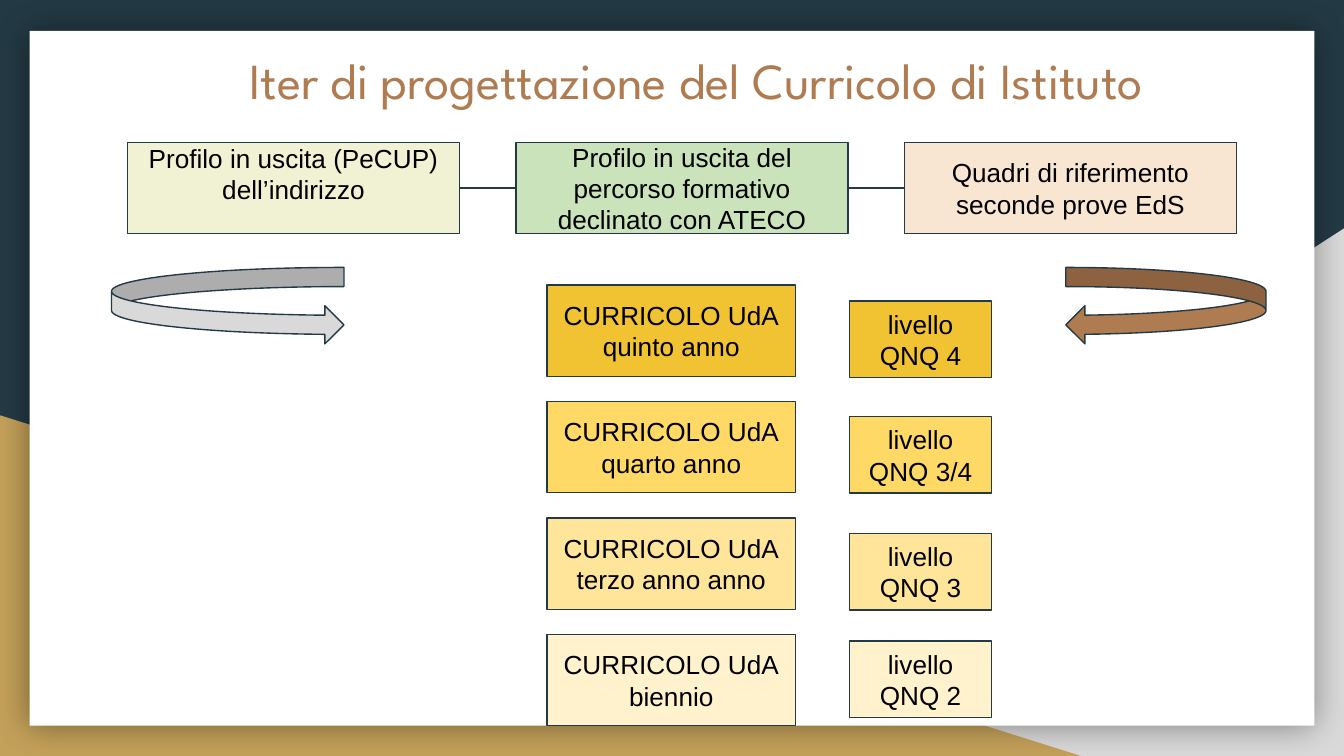
from dataclasses import dataclass
from typing import Optional

from lxml.etree import SubElement
from pptx import Presentation
from pptx.dml.color import RGBColor
from pptx.enum.shapes import MSO_CONNECTOR, MSO_SHAPE
from pptx.enum.text import MSO_ANCHOR, PP_ALIGN
from pptx.oxml.ns import qn
from pptx.util import Inches, Pt

NAVY = RGBColor(0x23, 0x3A, 0x44)
GRAY = RGBColor(0xD9, 0xD9, 0xD9)
GOLD = RGBColor(0xC4, 0xA1, 0x5A)
WHITE = RGBColor(0xFF, 0xFF, 0xFF)
BLACK = RGBColor(0, 0, 0)
BROWN = RGBColor(0xAF, 0x7B, 0x51)
CREAM = RGBColor(0xF1, 0xF2, 0xD3)
GREEN = RGBColor(0xC4, 0xE0, 0xB2)
PEACH = RGBColor(0xF8, 0xE6, 0xD3)
AMBER = RGBColor(0xF1, 0xC2, 0x32)
YELLOW = RGBColor(0xFF, 0xD9, 0x66)
LIGHT_YELLOW = RGBColor(0xFF, 0xE5, 0x99)
PALE_YELLOW = RGBColor(0xFF, 0xF2, 0xCC)


@dataclass(frozen=True)
class Box:
    left: float
    top: float
    width: float
    height: float


@dataclass(frozen=True)
class Year:
    name: str
    level: str
    level_top: float
    color: RGBColor


PROFILES = [
    (["Profilo in uscita (PeCUP)", "dell’indirizzo"], CREAM),
    (["Profilo in uscita del percorso formativo declinato con ATECO"], GREEN),
    (["Quadri di riferimento", "seconde prove EdS"], PEACH),
]
YEARS = [
    Year("quinto anno", "4", 2.24, AMBER),
    Year("quarto anno", "3/4", 3.1, YELLOW),
    Year("terzo anno anno", "3", 3.97, LIGHT_YELLOW),
    Year("biennio", "2", 4.77, PALE_YELLOW),
]


def add_panel(slide, kind: MSO_SHAPE, box: Box, fill: RGBColor,
              line: Optional[RGBColor] = None):
    shape = slide.shapes.add_shape(kind, Inches(box.left), Inches(box.top),
                                   Inches(box.width), Inches(box.height))
    shape.shadow.inherit = False
    shape.fill.solid()
    shape.fill.fore_color.rgb = fill
    if line is None:
        shape.line.fill.background()
    else:
        shape.line.color.rgb = line
        shape.line.width = Pt(0.75)
    return shape


def write_text(shape, lines: list[str], size: float, font: str, color: RGBColor) -> None:
    frame = shape.text_frame
    frame.word_wrap = True
    frame.vertical_anchor = MSO_ANCHOR.MIDDLE
    frame.margin_left = frame.margin_right = Inches(0.1)
    frame.margin_top = frame.margin_bottom = Inches(0.1)
    frame.text = "\n".join(lines)
    for paragraph in frame.paragraphs:
        paragraph.alignment = PP_ALIGN.CENTER
        paragraph.font.size = Pt(size)
        paragraph.font.name = font
        paragraph.font.color.rgb = color


def add_label(slide, box: Box, lines: list[str], fill: RGBColor):
    shape = add_panel(slide, MSO_SHAPE.RECTANGLE, box, fill, NAVY)
    write_text(shape, lines, 14, "Arial", BLACK)
    return shape


def set_alpha(color_element, percent: int) -> None:
    SubElement(color_element, qn("a:alpha")).set("val", str(percent * 1000))


def add_soft_shadow(shape) -> None:
    effects = shape._element.spPr.find(qn("a:effectLst"))
    shadow = SubElement(effects, qn("a:outerShdw"))
    shadow.set("blurRad", str(Pt(18)))
    shadow.set("rotWithShape", "0")
    color = SubElement(shadow, qn("a:srgbClr"))
    color.set("val", str(BLACK))
    set_alpha(color, 40)


def connect(slide, start, end) -> None:
    connector = slide.shapes.add_connector(MSO_CONNECTOR.STRAIGHT, 0, 0, 0, 0)
    connector.begin_connect(start, 3)
    connector.end_connect(end, 1)
    connector.line.color.rgb = NAVY
    connector.line.width = Pt(0.75)
    SubElement(connector._element.spPr, qn("a:effectLst"))


def add_backdrop(slide) -> None:
    slide.background.fill.solid()
    slide.background.fill.fore_color.rgb = NAVY
    corner = add_panel(slide, MSO_SHAPE.RIGHT_TRIANGLE, Box(3.92, 1.7, 6.08, 3.93), GRAY)
    corner._element.spPr.find(qn("a:xfrm")).set("flipH", "1")
    add_panel(slide, MSO_SHAPE.RIGHT_TRIANGLE, Box(0, 3.09, 8.06, 2.54), GOLD)
    sheet = add_panel(slide, MSO_SHAPE.RECTANGLE, Box(0.22, 0.23, 9.56, 5.17), WHITE)
    add_soft_shadow(sheet)


def add_profiles(slide) -> None:
    shapes = [add_label(slide, Box(0.95 + 2.89 * column, 1.06, 2.47, 0.68), lines, fill)
              for column, (lines, fill) in enumerate(PROFILES)]
    outgoing, pathway, _ = shapes
    outgoing.text_frame.vertical_anchor = MSO_ANCHOR.TOP
    outgoing.text_frame.margin_top = 0
    set_alpha(pathway._element.spPr.find(qn("a:solidFill"))[0], 89)
    for start, end in zip(shapes, shapes[1:]):
        connect(slide, start, end)


def add_years(slide) -> None:
    for row, year in enumerate(YEARS):
        add_label(slide, Box(4.07, 2.12 + 0.867 * row, 1.85, 0.68),
                  ["CURRICOLO UdA", year.name], year.color)
        add_label(slide, Box(6.32, year.level_top, 1.06, 0.57),
                  [f"livello QNQ {year.level}"], year.color)


def main() -> None:
    presentation = Presentation()
    presentation.slide_width = Inches(10)
    presentation.slide_height = Inches(5.625)
    slide = presentation.slides.add_slide(presentation.slide_layouts[6])
    add_backdrop(slide)
    title = slide.shapes.add_textbox(Inches(0.52), Inches(0.25), Inches(9.32), Inches(0.68))
    write_text(title, ["Iter di progettazione del Curricolo di Istituto"],
               27, "League Spartan", BROWN)
    add_profiles(slide)
    add_panel(slide, MSO_SHAPE.CURVED_RIGHT_ARROW, Box(0.83, 1.99, 1.73, 0.57), GRAY, NAVY)
    add_panel(slide, MSO_SHAPE.CURVED_LEFT_ARROW, Box(7.93, 1.99, 1.49, 0.57), BROWN, NAVY)
    add_years(slide)
    presentation.save("out.pptx")


if __name__ == "__main__":
    main()
